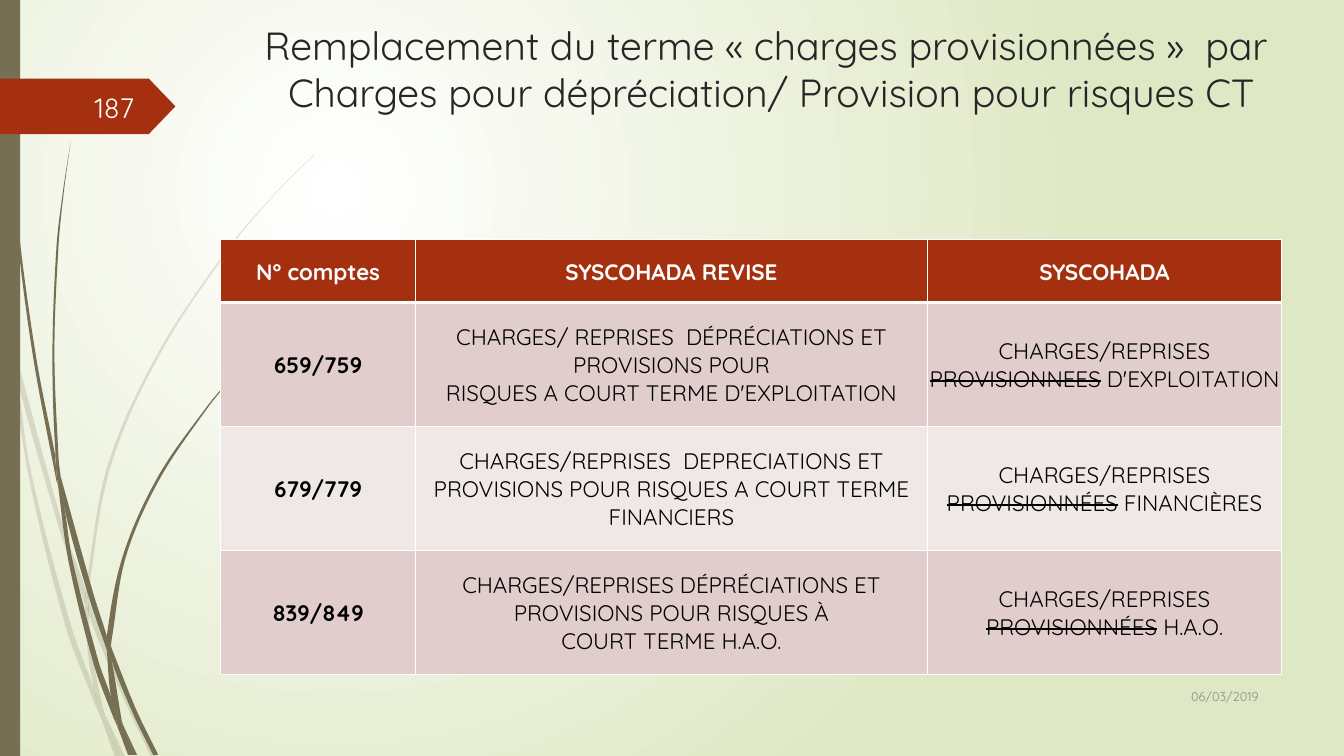
from math import dist

from lxml.etree import SubElement
from pptx import Presentation
from pptx.dml.color import RGBColor
from pptx.enum.shapes import MSO_SHAPE
from pptx.enum.text import MSO_ANCHOR, PP_ALIGN
from pptx.oxml.ns import qn
from pptx.util import Inches, Pt

# Content
TITLE = ("Remplacement du terme «\u00a0charges provisionnées\u00a0»  par \n"
         "Charges pour dépréciation/ Provision pour risques CT")
DATE, PAGE = "06/03/2019", "187"
HEADER = ["N° comptes", "SYSCOHADA REVISE", "SYSCOHADA"]
# account, new wording, (kept, struck out, kept)
ACCOUNTS = [
    ("659/759",
     "CHARGES/ REPRISES  DÉPRÉCIATIONS ET PROVISIONS POUR\nRISQUES A COURT TERME D'EXPLOITATION",
     ("CHARGES/REPRISES ", "PROVISIONNEES", " D'EXPLOITATION")),
    ("679/779",
     "CHARGES/REPRISES  DEPRECIATIONS ET PROVISIONS POUR RISQUES A COURT TERME FINANCIERS",
     ("CHARGES/REPRISES ", "PROVISIONNÉES", " FINANCIÈRES")),
    ("839/849",
     "CHARGES/REPRISES DÉPRÉCIATIONS ET PROVISIONS POUR RISQUES À\nCOURT TERME H.A.O.",
     ("CHARGES/REPRISES ", "PROVISIONNÉES", " H.A.O.")),
]
COLUMNS, HEADER_H, ROW_H = [1.93, 5.08, 3.51], 0.62, 1.23

# Grass: knots of each closed outline, in inches
PALE_GRASS = [
    [(0.11, 3.5), (0.09, 3.22), (0, 2.82), (0, 2.99), (0.1, 3.44)],
    [(0.58, 5.22), (0.84, 5.99), (0.85, 5.86), (0.62, 5.2), (0.14, 3.45), (0.17, 3.76)],
    [(0.92, 6.07), (0.88, 5.96), (0.88, 6.1), (1.23, 6.94), (1.5, 7.51), (1.55, 7.51),
     (1.27, 6.92)],
    [(1.19, 7.51), (1.24, 7.51), (1.05, 7.11)],
    [(0.93, 6.83), (0.7, 6.19), (0.31, 4.69), (0.17, 3.76), (0.11, 3.5), (0.28, 4.7),
     (0.65, 6.21), (0.92, 6.93), (1.01, 7.14), (0.99, 7.07)],
    [(0.84, 5.99), (0.87, 6.46), (0.93, 6.83), (0.96, 6.92), (1.05, 7.11), (1.03, 7.06),
     (0.91, 6.46), (0.88, 6.1), (0.88, 6.08)],
    [(0.88, 5.84), (1.1, 4.62), (1.6, 3.49), (2.29, 2.45), (2.68, 1.98), (2.9, 1.75),
     (3.12, 1.54), (3.12, 1.53), (2.89, 1.75), (2.68, 1.97), (2.28, 2.44), (1.58, 3.48),
     (1.07, 4.61), (0.85, 5.84), (0.85, 5.86), (0.88, 5.96)],
    [(1.01, 7.14), (1.14, 7.51), (1.19, 7.51)],
    [(0.88, 6.08), (0.88, 6.1), (0.88, 5.96), (0.85, 5.86), (0.84, 5.99)],
    [(0.96, 6.92), (0.93, 6.83), (0.99, 7.07), (1.01, 7.14), (1.19, 7.51), (1.05, 7.11)],
]
DARK_GRASS = [
    [(0.07, 1.1), (0.17, 2.33), (0.33, 3.55), (0.56, 4.77), (0.57, 4.81), (0.55, 4.57),
     (0.55, 4.53), (0.36, 3.55), (0.19, 2.32), (0.08, 1.09), (0.05, 0.48), (0.04, 0),
     (0.03, 0), (0.04, 0.48)],
    [(0.88, 5.92), (1.06, 6.45), (1.06, 6.33), (1.06, 6.31), (0.93, 5.9), (0.6, 4.72),
     (0.64, 5.05)],
    [(1.13, 6.49), (1.1, 6.41), (1.11, 6.56), (1.32, 7.08), (1.52, 7.49), (1.57, 7.49),
     (1.36, 7.06)],
    [(1.1, 6.91), (0.98, 6.57), (0.72, 5.56), (0.64, 5.05), (0.57, 4.77), (0.68, 5.57),
     (0.93, 6.59), (1.11, 7.08), (1.17, 7.22), (1.16, 7.17)],
    [(0.6, 4.72), (0.58, 4.53), (0.54, 3.49), (0.58, 2.45), (0.63, 1.93), (0.7, 1.41),
     (0.62, 1.93), (0.56, 2.45), (0.52, 3.49), (0.55, 4.49)],
    [(1.33, 7.49), (1.36, 7.49), (1.22, 7.19)],
    [(0.57, 4.77), (0.64, 5.05), (0.6, 4.72), (0.55, 4.49), (0.55, 4.53)],
    [(1.11, 6.33), (1.25, 5.52), (1.58, 4.76), (2.05, 4.06), (2.31, 3.74), (2.45, 3.59),
     (2.61, 3.44), (2.6, 3.44), (2.45, 3.58), (2.31, 3.73), (2.04, 4.05), (1.56, 4.74),
     (1.22, 5.51), (1.06, 6.31), (1.1, 6.41)],
    [(1.17, 7.22), (1.27, 7.49), (1.31, 7.49)],
    [(1.06, 6.45), (1.1, 6.91), (1.16, 7.06), (1.22, 7.19), (1.21, 7.16), (1.11, 6.56),
     (1.09, 6.51)],
    [(1.06, 6.45), (1.09, 6.51), (1.11, 6.56), (1.1, 6.41), (1.06, 6.31), (1.06, 6.33)],
    [(1.16, 7.06), (1.1, 6.91), (1.16, 7.17), (1.17, 7.22), (1.3, 7.49), (1.33, 7.49),
     (1.22, 7.19)],
]

FONT = "Quicksand"
WHITE = RGBColor(0xFF, 0xFF, 0xFF)
BLACK = RGBColor(0, 0, 0)
PALE_GREEN = RGBColor(0xDF, 0xE8, 0xC4)
OLIVE = RGBColor(0x76, 0x6F, 0x54)
RUST = RGBColor(0xA5, 0x30, 0x10)
ROSE = RGBColor(0xE1, 0xCD, 0xCC)
PALE_ROSE = RGBColor(0xF0, 0xE8, 0xE7)
INK = RGBColor(0x26, 0x26, 0x26)
GREY = RGBColor(0x8C, 0x8C, 0x8C)
PAGE_WHITE = RGBColor(0xFE, 0xFF, 0xFF)

prs = Presentation()
prs.slide_width, prs.slide_height = Inches(13.33), Inches(7.5)
s = prs.slides.add_slide(prs.slide_layouts[6])


def paint(sp, color):
    sp.fill.solid()
    sp.fill.fore_color.rgb = color
    sp.line.fill.background()
    sp.shadow.inherit = False


def add_run(p, text, size, color, bold=False, strike=False):
    for i, line in enumerate(text.split("\n")):
        if i:
            p.add_line_break()
        r = p.add_run()
        r.text = line
        r.font.name, r.font.size, r.font.bold = FONT, Pt(size), bold
        r.font.color.rgb = color
        if strike:
            r.font._element.set("strike", "sngStrike")


def add_text(box, text, size, color, align, anchor):
    tf = s.shapes.add_textbox(*map(Inches, box)).text_frame
    tf.word_wrap, tf.vertical_anchor = True, anchor
    p = tf.paragraphs[0]
    p.alignment = align
    add_run(p, text, size, color)


def unit(a, b):
    return [(b[k] - a[k]) / dist(a, b) for k in (0, 1)]


def add_grass(knots, alpha=None):
    """Closed outline, curved through its knots and sharp where it turns back."""
    pts = [(x * 1000, y * 1000) for x, y in knots]
    builder = s.shapes.build_freeform(*pts[0], scale=Inches(1) / 1000)
    builder.add_line_segments(pts[1:] + pts[:1], close=True)
    sp = builder.convert_to_shape()
    paint(sp, OLIVE)
    left, top = (min(pt[k] for pt in pts) for k in (0, 1))
    pts = [(x - left, y - top) for x, y in pts]
    slopes = []  # direction on arriving at and on leaving each knot
    for i, pt in enumerate(pts):
        before, after = pts[i - 1], pts[(i + 1) % len(pts)]
        arrive, leave = unit(before, pt), unit(pt, after)
        if arrive[0] * leave[0] + arrive[1] * leave[1] > 0.7:
            arrive = leave = unit(before, after)
        slopes.append((arrive, leave))
    for i, line in enumerate(list(sp._element.iter(qn("a:lnTo")))):
        j = (i + 1) % len(pts)
        reach = dist(pts[i], pts[j]) / 3
        controls = [[pts[i][k] + slopes[i][1][k] * reach for k in (0, 1)],
                    [pts[j][k] - slopes[j][0][k] * reach for k in (0, 1)], pts[j]]
        curve = line.makeelement(qn("a:cubicBezTo"))
        for x, y in controls:
            SubElement(curve, qn("a:pt"), x=str(round(x)), y=str(round(y)))
        line.getparent().replace(line, curve)
    if alpha:
        clr = sp._element.spPr.find(qn("a:solidFill"))[0]
        SubElement(clr, qn("a:alpha")).set("val", str(alpha * 1000))


def fill_cell(cell, runs, color, fill, bold, top, bottom):
    cell.margin_left = cell.margin_right = cell.margin_top = Inches(0.01)
    cell.margin_bottom = 0
    cell.vertical_anchor = MSO_ANCHOR.MIDDLE
    for side, width in (("L", 1), ("R", 1), ("T", top), ("B", bottom)):
        ln = SubElement(cell._tc.get_or_add_tcPr(), qn("a:ln" + side), w=str(Pt(width)))
        SubElement(SubElement(ln, qn("a:solidFill")), qn("a:srgbClr")).set("val", str(WHITE))
    cell.fill.solid()
    cell.fill.fore_color.rgb = fill
    p = cell.text_frame.paragraphs[0]
    p.alignment = PP_ALIGN.CENTER
    for i, text in enumerate(runs):
        add_run(p, text, 16, color, bold, strike=i == 1)


# Background: round glow in the upper left
bg = s.background.fill
bg.gradient()
for stop, color in zip(bg.gradient_stops, (WHITE, PALE_GREEN)):
    stop.color.rgb = color
grad = s._element.find(".//" + qn("a:gradFill"))
grad.remove(grad.find(qn("a:lin")))
glow = SubElement(grad, qn("a:path"), path="circle")
SubElement(glow, qn("a:fillToRect"), l="50000", t="50000", r="100000", b="100000")

# Grass, side bar and page flag
for knots in PALE_GRASS:
    add_grass(knots, alpha=20)
for knots in DARK_GRASS:
    add_grass(knots)
bar = s.shapes.add_shape(MSO_SHAPE.RECTANGLE, 0, 0, Inches(0.2), Inches(7.5))
paint(bar, OLIVE)
flag = s.shapes.add_shape(MSO_SHAPE.PENTAGON, 0, Inches(0.78), Inches(1.74), Inches(0.55))
flag.adjustments[0] = 0.48
paint(flag, RUST)

# Title, date and page number
add_text((2.5, 0.16, 10.3, 1.4), TITLE, 28, INK, PP_ALIGN.CENTER, MSO_ANCHOR.TOP)
add_text((11.33, 6.7, 1.25, 0.41), DATE, 9, GREY, PP_ALIGN.RIGHT, MSO_ANCHOR.MIDDLE)
add_text((0.58, 0.86, 0.85, 0.4), PAGE, 20, PAGE_WHITE, PP_ALIGN.RIGHT, MSO_ANCHOR.MIDDLE)

# Table of accounts
height = HEADER_H + ROW_H * len(ACCOUNTS)
table = s.shapes.add_table(len(ACCOUNTS) + 1, len(COLUMNS), Inches(2.19), Inches(2.38),
                           Inches(sum(COLUMNS)), Inches(height)).table
for column, width in zip(table.columns, COLUMNS):
    column.width = Inches(width)
for i, row in enumerate(table.rows):
    row.height = Inches(ROW_H if i else HEADER_H)
for c, text in enumerate(HEADER):
    fill_cell(table.cell(0, c), [text], WHITE, RUST, True, 1, 3)
for i, (account, revised, former) in enumerate(ACCOUNTS):
    for c, runs in enumerate(([account], [revised], former)):
        fill_cell(table.cell(i + 1, c), runs, BLACK, PALE_ROSE if i % 2 else ROSE,
                  c == 0, 1 if i else 3, 1)

prs.save("out.pptx")
